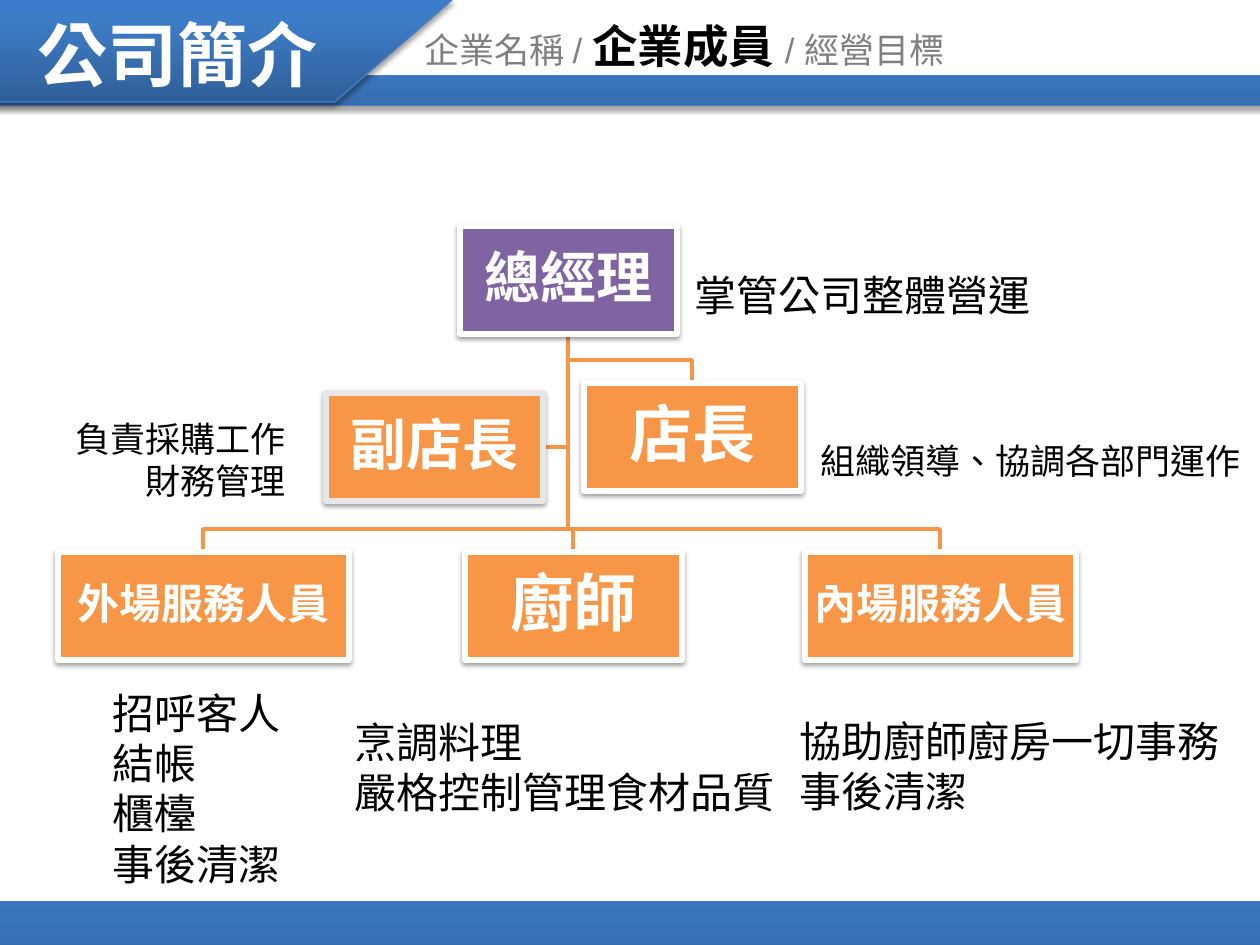
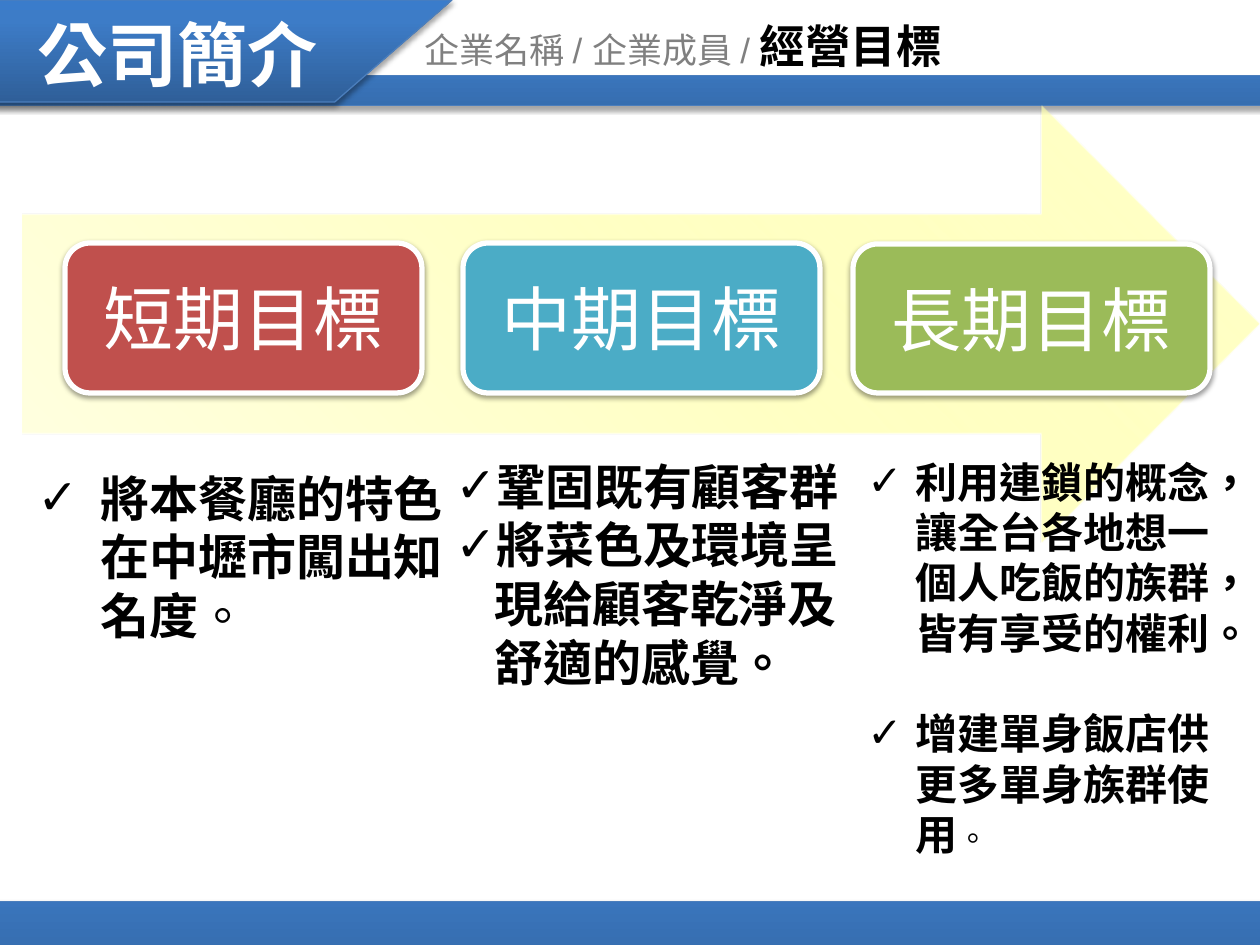
from pptx import Presentation
from pptx.dml.color import RGBColor
from pptx.enum.shapes import MSO_SHAPE
from pptx.enum.text import MSO_ANCHOR, MSO_AUTO_SIZE, PP_ALIGN
from pptx.oxml import parse_xml
from pptx.oxml.ns import nsdecls, qn
from pptx.util import Pt

PX = 914400 / 126
FONT, CJK_FONT = "Arial", "Noto Sans CJK SC"
COLORS = {
    "white": "FFFFFF", "black": "000000", "grey": "808080", "band_line": "4B7EBC",
    "deputy_line": "E7E7E7", "purple": "8064A2", "orange": "F79646",
    "red": "C0504D", "teal": "4BACC6", "green": "9BBB59",
}

# Gradient stops: position %, colour, opacity %
BAND_STOPS = [(0, "2F5F99", 100), (80, "3D7CC7", 100), (100, "3A7CCB", 100)]
ARROW_STOPS = [(0, "FFFFA0", 56), (50, "FFFFC5", 100), (100, "FFFFE3", 100)]

SECTION = "公司簡介"
TOPICS = ["企業名稱", "企業成員", "經營目標"]
TITLE_BOX = (412, 6, 735, 78)
SECTION_BOX = (25, 5, 309, 97)
BANDS = [
    (MSO_SHAPE.MATH_MINUS, (-324, 26, 1856, 129)),
    (MSO_SHAPE.FLOWCHART_DATA, (-134, 0, 586, 102)),
    (MSO_SHAPE.MATH_MINUS, (-307, 820, 1856, 213)),
]

# Role: box, fill, line, text size
ROLES = {
    "總經理": ((460, 226, 217, 108), "purple", "white", 32),
    "外場服務人員": ((58, 552, 291, 108), "orange", "white", 24),
    "廚師": ((465, 552, 217, 108), "orange", "white", 36),
    "內場服務人員": ((805, 552, 271, 108), "orange", "white", 24),
    "店長": ((584, 383, 217, 108), "orange", "white", 36),
    "副店長": ((326, 393, 217, 108), "orange", "deputy_line", 32),
}
STAFF = ["外場服務人員", "廚師", "內場服務人員"]
MANAGER_BRANCH_Y, STAFF_BRANCH_Y = 360, 529
DUTIES = [
    (["掌管公司整體營運"], (682, 263, 364, 63), 24, PP_ALIGN.LEFT),
    (["組織領導、協調各部門運作"], (808, 433, 450, 55), 20, PP_ALIGN.LEFT),
    (["負責採購工作", "財務管理"], (-89, 411, 387, 97), 20, PP_ALIGN.RIGHT),
    (["招呼客人", "結帳", "櫃檯", "事後清潔"], (100, 681, 195, 217), 24, PP_ALIGN.LEFT),
    (["協助廚師廚房一切事務", "事後清潔"], (787, 709, 450, 115), 24, PP_ALIGN.LEFT),
    (["烹調料理", "嚴格控制管理食材品質"], (342, 710, 450, 115), 24, PP_ALIGN.LEFT),
]

ARROW_BOX = (23, 106, 1237, 436)
# Points hold runs of (text, size, bold); gap is the space between points in pt
GOALS = [
    {"name": "短期目標", "color": "red", "box": (65, 243, 357, 150),
     "list_box": (25, 462, 436, 190), "indent": 63, "gap": 0,
     "points": [[("將本餐廳的特色在中壢市闖出知名度", 28, True), ("。", 28, False)]]},
    {"name": "中期目標", "color": "teal", "box": (463, 243, 357, 150),
     "list_box": (443, 450, 413, 251), "indent": 39, "gap": 0,
     "points": [[("鞏固既有顧客群", 28, True)],
                [("將菜色及環境呈現給顧客乾淨及舒適的感覺。", 28, True)]]},
    {"name": "長期目標", "color": "green", "box": (853, 244, 357, 149),
     "list_box": (855, 450, 398, 420), "indent": 48, "gap": 28.5,
     "points": [[("利用連鎖的概念，讓全台各地想一個人吃飯的族群，皆有享受的權利。", 24, True)],
                [("增建單身飯店供更多單身族群使用", 24, True), ("。", 18, False)]]},
]


def emu(*lengths):
    return [round(length * PX) for length in lengths]


def rgb(color):
    return RGBColor.from_string(COLORS[color])


def add_run(paragraph, text, size, color="black", bold=False, font=FONT):
    run = paragraph.add_run()
    run.text = text
    run.font.size, run.font.bold, run.font.name = Pt(size), bold, font
    run.font.color.rgb = rgb(color)
    properties = run.font._element
    properties.set("lang", "zh-TW")
    east_asian = parse_xml(f'<a:ea {nsdecls("a")} typeface="{CJK_FONT}"/>')
    properties.find(qn("a:latin")).addnext(east_asian)


def add_paragraphs(frame, count):
    return [frame.paragraphs[0]] + [frame.add_paragraph() for _ in range(count - 1)]


def add_text_box(slide, box, wrap):
    text_box = slide.shapes.add_textbox(*emu(*box))
    text_box.text_frame.word_wrap = wrap
    return text_box


def set_gradient(shape, stops, angle):
    shape.fill.gradient()
    stop_xml = "".join(
        f'<a:gs pos="{pos * 1000}"><a:srgbClr val="{color}">'
        f'<a:alpha val="{opacity * 1000}"/></a:srgbClr></a:gs>'
        for pos, color, opacity in stops)
    gradient = parse_xml(
        f'<a:gradFill {nsdecls("a")} rotWithShape="1"><a:gsLst>{stop_xml}</a:gsLst>'
        f'<a:lin ang="{angle * 60000}" scaled="0"/></a:gradFill>')
    properties = shape.element.spPr
    properties.replace(properties.find(qn("a:gradFill")), gradient)


def set_shadow(shape, opacity, distance):
    shape.shadow.inherit = False
    shape.element.spPr.find(qn("a:effectLst")).append(parse_xml(
        f'<a:outerShdw {nsdecls("a")} blurRad="{Pt(3.1)}" dist="{Pt(distance)}" '
        f'dir="5400000" rotWithShape="0"><a:srgbClr val="000000">'
        f'<a:alpha val="{opacity * 1000}"/></a:srgbClr></a:outerShdw>'))


def add_card(slide, kind, box, fill, line, text, size, bold, line_spacing=1.0):
    card = slide.shapes.add_shape(kind, *emu(*box))
    card.fill.solid()
    card.fill.fore_color.rgb = rgb(fill)
    card.line.color.rgb, card.line.width = rgb(line), Pt(3)
    set_shadow(card, 38, 1.6)
    frame = card.text_frame
    frame.margin_left = frame.margin_right = frame.margin_top = frame.margin_bottom = emu(3)[0]
    frame.vertical_anchor = MSO_ANCHOR.MIDDLE
    label = frame.paragraphs[0]
    label.alignment, label.line_spacing = PP_ALIGN.CENTER, line_spacing
    add_run(label, text, size, "white", bold)


def add_branch(slide, start, *bends):
    """Draw an open, unfilled line from start through each bend."""
    builder = slide.shapes.build_freeform(*start, scale=PX)
    builder.add_line_segments(bends, close=False)
    branch = builder.convert_to_shape()
    branch.fill.background()
    branch.line.color.rgb, branch.line.width = rgb("orange"), Pt(2)
    branch.shadow.inherit = False


def fill_layout(layout, slide):
    """Build the bands and section name on the slide, then hand them to its layout."""
    parts = []
    for kind, box in BANDS:
        band = slide.shapes.add_shape(kind, *emu(*box))
        set_gradient(band, BAND_STOPS, 270)
        band.line.color.rgb, band.line.width = rgb("band_line"), Pt(0.75)
        set_shadow(band, 35, 1.8)
        parts.append(band)
    section = add_text_box(slide, SECTION_BOX, wrap=False)
    add_run(section.text_frame.paragraphs[0], SECTION, 40, "white", True, CJK_FONT)
    parts.insert(2, section)
    for number, part in enumerate(parts, 100):
        part.element.nvSpPr.cNvPr.set("id", str(number))
        layout.shapes.element.append(part.element)
    title = layout.placeholders[0]
    title.left, title.top, title.width, title.height = emu(*TITLE_BOX)


def fill_title(slide, current):
    frame = slide.shapes.title.text_frame
    frame.auto_size = MSO_AUTO_SIZE.NONE
    frame.vertical_anchor = MSO_ANCHOR.MIDDLE
    heading = frame.paragraphs[0]
    heading.alignment = PP_ALIGN.LEFT
    before, after = TOPICS[:current], TOPICS[current + 1:]
    add_run(heading, "".join(f"{topic} / " for topic in before), 20, "grey")
    add_run(heading, TOPICS[current] + (" " if after else ""), 26, bold=True)
    if after:
        add_run(heading, "/ " + " / ".join(after), 20, "grey")


def build_members(slide):
    def center(role):
        left, top, width, height = ROLES[role][0]
        return left + width // 2, top + height // 2

    boss_x = center("總經理")[0]
    boss_bottom = ROLES["總經理"][0][1] + ROLES["總經理"][0][3]
    deputy_left, _, deputy_width, _ = ROLES["副店長"][0]
    deputy_y = center("副店長")[1]

    add_branch(slide, (boss_x, boss_bottom), (boss_x, deputy_y),
               (deputy_left + deputy_width, deputy_y))
    for role in ["店長"] + STAFF:
        bend_y = STAFF_BRANCH_Y if role in STAFF else MANAGER_BRANCH_Y
        x = center(role)[0]
        add_branch(slide, (boss_x, boss_bottom), (boss_x, bend_y), (x, bend_y),
                   (x, ROLES[role][0][1]))

    for role, (box, fill, line, size) in ROLES.items():
        add_card(slide, MSO_SHAPE.RECTANGLE, box, fill, line, role, size, True, 0.9)

    for lines, box, size, alignment in DUTIES:
        frame = add_text_box(slide, box, wrap=alignment == PP_ALIGN.RIGHT).text_frame
        for paragraph, line in zip(add_paragraphs(frame, len(lines)), lines):
            paragraph.alignment = alignment
            add_run(paragraph, line, size)


def add_check(paragraph, indent):
    properties = paragraph._p.get_or_add_pPr()
    properties.set("marL", str(indent))
    properties.set("indent", str(-indent))
    properties.append(parse_xml(f'<a:buFont {nsdecls("a")} typeface="{FONT}"/>'))
    properties.append(parse_xml(f'<a:buChar {nsdecls("a")} char="✓"/>'))


def build_goals(slide):
    arrow = slide.shapes.add_shape(MSO_SHAPE.RIGHT_ARROW, *emu(*ARROW_BOX))
    set_gradient(arrow, ARROW_STOPS, 135)
    arrow.line.fill.background()
    arrow.shadow.inherit = False
    for goal in GOALS:
        add_card(slide, MSO_SHAPE.ROUNDED_RECTANGLE, goal["box"], goal["color"], "white",
                 goal["name"], 40, False)
    for goal in GOALS:
        frame = add_text_box(slide, goal["list_box"], wrap=True).text_frame
        points = goal["points"]
        for order, paragraph in enumerate(add_paragraphs(frame, len(points))):
            if order:
                paragraph.space_before = Pt(goal["gap"])
            add_check(paragraph, emu(goal["indent"])[0])
            for text, size, bold in points[order]:
                add_run(paragraph, text, size, bold=bold)


def main():
    deck = Presentation()
    deck.slide_width, deck.slide_height = emu(1260, 945)
    layout = deck.slide_layouts[5]
    members, goals = (deck.slides.add_slide(layout) for _ in range(2))
    fill_layout(layout, members)
    fill_title(members, 1)
    build_members(members)
    fill_title(goals, 2)
    build_goals(goals)
    deck.save("out.pptx")


if __name__ == "__main__":
    main()
